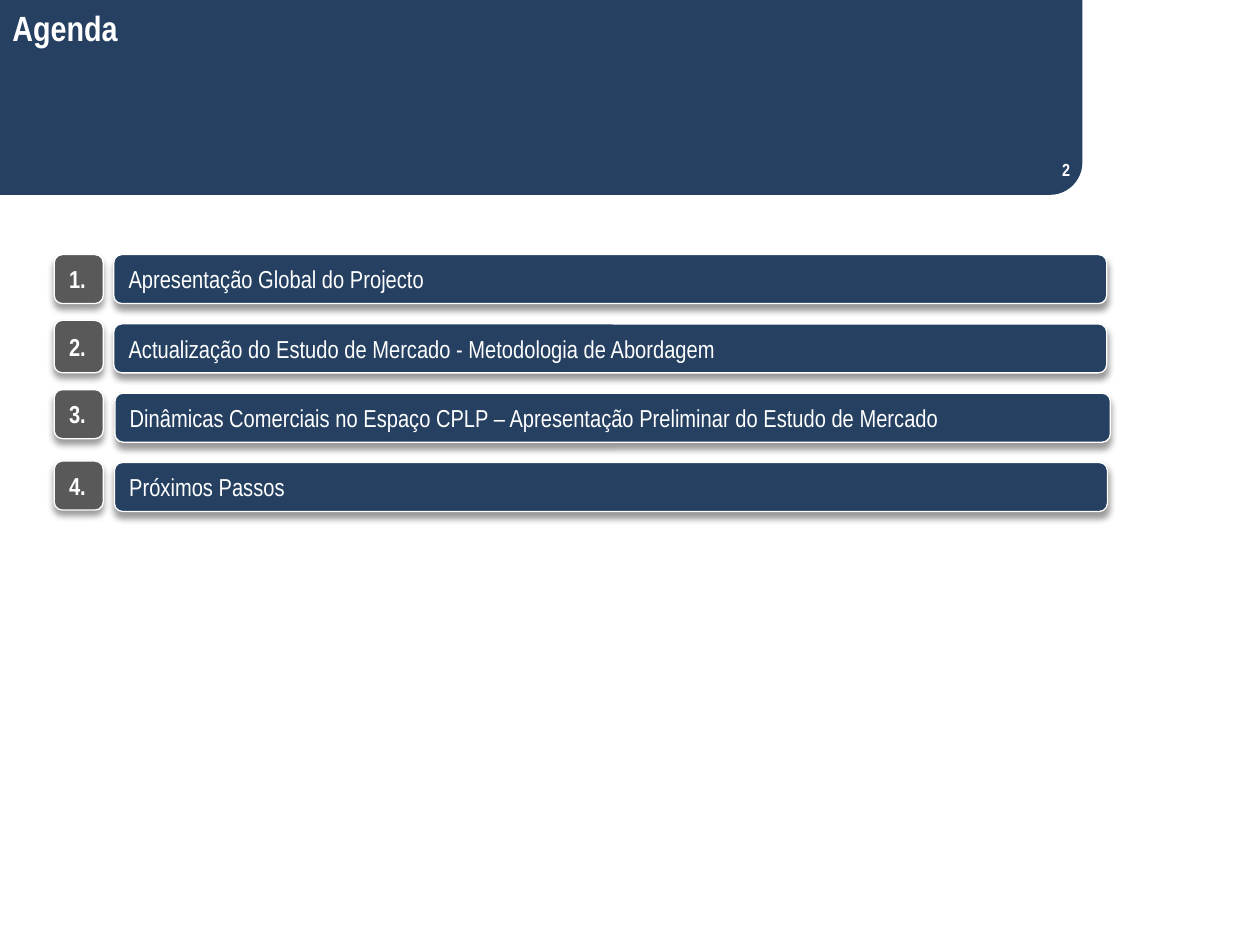
from lxml import etree
from pptx import Presentation
from pptx.dml.color import RGBColor
from pptx.enum.shapes import MSO_SHAPE
from pptx.enum.text import MSO_ANCHOR, MSO_AUTO_SIZE, PP_ALIGN
from pptx.oxml.ns import qn
from pptx.util import Pt

DIAGONAL = MSO_SHAPE.ROUND_2_DIAG_RECTANGLE
ROUNDED = MSO_SHAPE.ROUNDED_RECTANGLE
MIDDLE = MSO_ANCHOR.MIDDLE
LEFT, RIGHT = PP_ALIGN.LEFT, PP_ALIGN.RIGHT
GROW = MSO_AUTO_SIZE.SHAPE_TO_FIT_TEXT

FONT = "Arial Narrow"
COLORS = {"navy": "254061", "gray": "595959", "white": "FFFFFF", "shadow": "000000"}

# Topic, bar left, bar width, badge lift above the bar, badge height
TOPICS = [
    ("Apresentação Global do Projecto", 34, 567.4, 0, 28),
    ("Actualização do Estudo de Mercado - Metodologia de Abordagem", 34, 567.4, 2, 30),
    ("Dinâmicas Comerciais no Espaço CPLP – Apresentação Preliminar do Estudo de Mercado",
     34.7, 568.8, 2, 28),
    ("Próximos Passos", 34.4, 567.4, 0.8, 28),
]


def rgb(name):
    return RGBColor.from_string(COLORS[name])


def write(frame, text, size, bold=False, align=LEFT):
    frame.word_wrap = True
    paragraph = frame.paragraphs[0]
    paragraph.text = text
    paragraph.alignment = align
    font = paragraph.font
    font.name, font.size, font.bold = FONT, Pt(size), bold
    font.color.rgb = rgb("white")


def add_block(slide, preset, left, top, width, height, color):
    block = slide.shapes.add_shape(preset, Pt(left), Pt(top), Pt(width), Pt(height))
    block.fill.solid()
    block.fill.fore_color.rgb = rgb(color)
    block.line.fill.background()
    block.shadow.inherit = False
    return block


def add_shadow(block):
    effects = block._element.spPr.find(qn("a:effectLst"))
    shadow = etree.SubElement(effects, qn("a:outerShdw"), blurRad=str(Pt(4)),
                              dist=str(Pt(3)), dir="5400000", rotWithShape="0")
    tint = etree.SubElement(shadow, qn("a:srgbClr"), val=COLORS["shadow"])
    etree.SubElement(tint, qn("a:alpha"), val="40000")


def add_label(slide, left, top, width, height, text, color, bold=False):
    label = add_block(slide, ROUNDED, left, top, width, height, color)
    label.line.color.rgb = rgb("white")
    label.line.width = Pt(0.75)
    add_shadow(label)
    label.text_frame.vertical_anchor = MIDDLE
    write(label.text_frame, text, 14, bold)


def add_header(slide, left, top, width, height, title, number):
    add_block(slide, DIAGONAL, left, top, width, height, "navy")
    # Square block that fills the rounded top-left corner
    corner = add_block(slide, DIAGONAL, left, top, 550, 65, "navy")
    corner.adjustments[0] = 0

    heading = slide.shapes.add_textbox(Pt(left), Pt(top), Pt(317.5), Pt(31.5))
    write(heading.text_frame, title, 20, bold=True)
    heading.text_frame.auto_size = GROW

    # Page number in the bottom-right corner
    box_width, box_height = 168, 28.8
    page = slide.shapes.add_textbox(Pt(left + width - box_width), Pt(top + height - box_height),
                                    Pt(box_width), Pt(box_height))
    page.text_frame.vertical_anchor = MIDDLE
    write(page.text_frame, number, 10, bold=True, align=RIGHT)


def add_agenda(slide, left, top, pitch, bar_height):
    for index, (topic, bar_left, bar_width, lift, badge_height) in enumerate(TOPICS):
        row_top = top + index * pitch
        add_label(slide, left + bar_left, row_top, bar_width, bar_height, topic, "navy")
        add_label(slide, left, row_top - lift, 28, badge_height, f"{index + 1}.", "gray", bold=True)


def main():
    deck = Presentation()
    deck.slide_width, deck.slide_height = Pt(720), Pt(540)
    slide = deck.slides.add_slide(deck.slide_layouts[6])
    add_header(slide, 0, 0, 618.5, 111.4, "Agenda", "2")
    add_agenda(slide, 31, 145.5, pitch=39.6, bar_height=28)
    deck.save("out.pptx")


if __name__ == "__main__":
    main()
